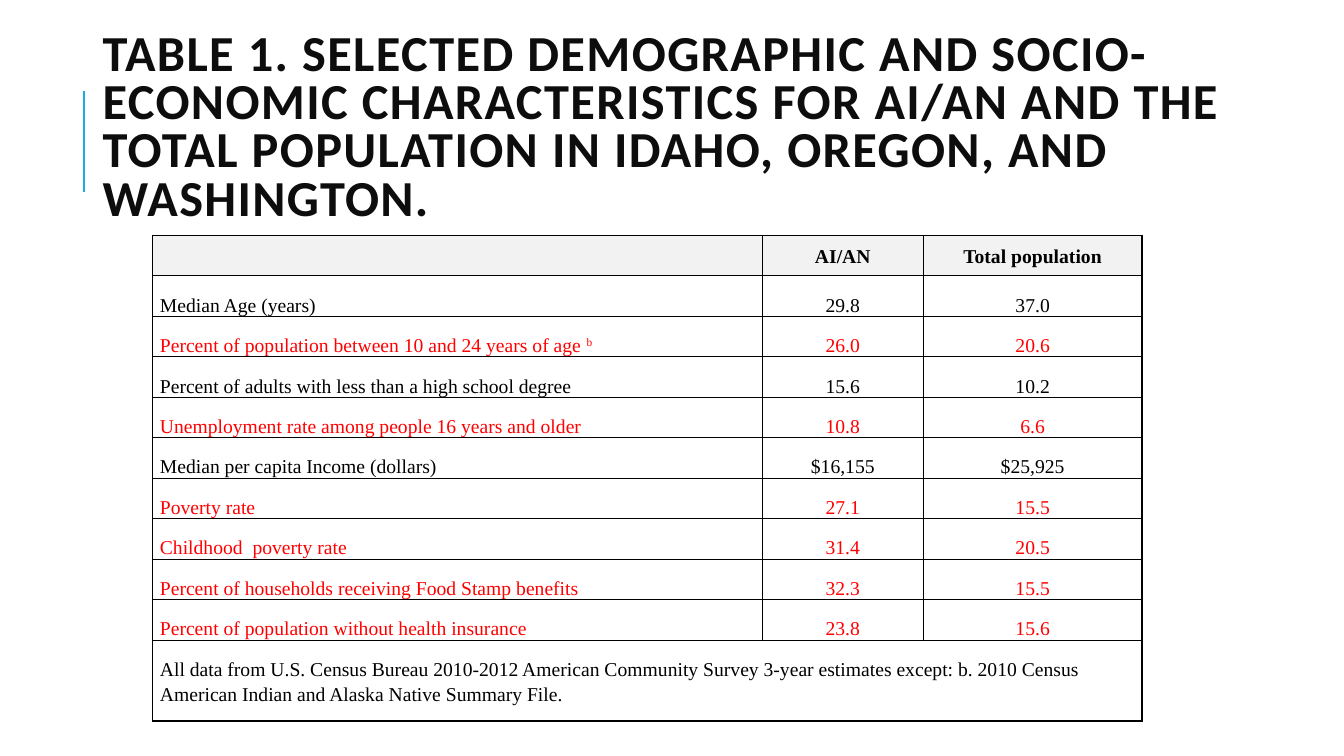
from pptx import Presentation
from pptx.dml.color import RGBColor
from pptx.enum.shapes import MSO_CONNECTOR
from pptx.enum.text import MSO_ANCHOR as ANCHOR, PP_ALIGN as ALIGN
from pptx.oxml.ns import qn
from pptx.util import Cm, Pt
from lxml.etree import SubElement

# Content
TITLE = ("TABLE 1. SELECTED DEMOGRAPHIC AND SOCIO-ECONOMIC CHARACTERISTICS "
         "FOR AI/AN AND THE TOTAL POPULATION IN IDAHO, OREGON, AND WASHINGTON.")
HEADER = ("", "AI/AN", "Total population")
BLACK, RED = "000000", "FF0000"
INDICATORS = [  # label, AI/AN, total population, colour
    ("Median Age (years)", "29.8", "37.0", BLACK),
    ("Percent of population between 10 and 24 years of age ", "26.0", "20.6", RED),
    ("Percent of adults with less than a high school degree", "15.6", "10.2", BLACK),
    ("Unemployment rate among people 16 years and older", "10.8", "6.6", RED),
    ("Median per capita Income (dollars)", "$16,155", "$25,925", BLACK),
    ("Poverty rate", "27.1", "15.5", RED),
    ("Childhood  poverty rate", "31.4", "20.5", RED),
    ("Percent of households receiving Food Stamp benefits", "32.3", "15.5", RED),
    ("Percent of population without health insurance", "23.8", "15.6", RED),
]
FOOTNOTE_ROW, FOOTNOTE_MARK = 2, "b"
SOURCE = ("All data from U.S. Census Bureau 2010-2012 American Community Survey "
          "3-year estimates except: b. 2010 Census American Indian and Alaska "
          "Native Summary File.")

# Layout in cm
COLUMNS = (15.36, 4.06, 5.51)
ROW = 1.02
TABLE_LEFT, TABLE_TOP = 3.85, 5.93


def rgb(value):
    return RGBColor.from_string(value)


def style_run(r, font, size, color, bold):
    r.font.name, r.font.size, r.font.bold = font, Pt(size), bold
    r.font.color.rgb = rgb(color)


def add_borders(cell):
    tc_pr = cell._tc.get_or_add_tcPr()
    for side in ("a:lnL", "a:lnR", "a:lnT", "a:lnB"):
        ln = SubElement(tc_pr, qn(side), w=str(Pt(1)))
        fill = SubElement(ln, qn("a:solidFill"))
        SubElement(fill, qn("a:srgbClr"), val=BLACK)


def write_cell(cell, text, color=BLACK, bold=False, align=ALIGN.LEFT,
               anchor=ANCHOR.BOTTOM):
    cell.margin_left = cell.margin_right = Cm(0.18)
    cell.margin_top = cell.margin_bottom = 0
    cell.vertical_anchor = anchor
    p = cell.text_frame.paragraphs[0]
    p.text = text
    p.alignment, p.line_spacing = align, 1.15
    for r in p.runs:
        style_run(r, "Times New Roman", 14, color, bold)


prs = Presentation()
prs.slide_width, prs.slide_height = Cm(33.87), Cm(19.05)
s = prs.slides.add_slide(prs.slide_layouts[6])

# Accent line beside the title
accent = s.shapes.add_connector(MSO_CONNECTOR.STRAIGHT, Cm(2.12), Cm(4.83), Cm(2.12), Cm(2.29))
accent.line.color.rgb = rgb("1CADE4")
accent.line.width = Pt(1.5)
SubElement(accent._element.spPr, qn("a:effectLst"))

# Table
row_count = len(INDICATORS) + 2
table = s.shapes.add_table(row_count, len(COLUMNS), Cm(TABLE_LEFT), Cm(TABLE_TOP),
                           Cm(sum(COLUMNS)), Cm(ROW * (row_count + 1))).table
for column, width in zip(table.columns, COLUMNS):
    column.width = Cm(width)
for row in table.rows:
    row.height = Cm(ROW)
table.rows[row_count - 1].height = Cm(2 * ROW)

for i, row in enumerate(table.rows):
    for cell in row.cells:
        add_borders(cell)
        if i == 0:
            cell.fill.solid()
            cell.fill.fore_color.rgb = rgb("F2F2F2")
        else:
            cell.fill.background()

for j, text in enumerate(HEADER):
    write_cell(table.cell(0, j), text, bold=True, align=ALIGN.CENTER, anchor=ANCHOR.MIDDLE)
for i, (*texts, color) in enumerate(INDICATORS, 1):
    for j, text in enumerate(texts):
        write_cell(table.cell(i, j), text, color, align=ALIGN.CENTER if j else ALIGN.LEFT)

# Footnote mark and source row
mark = table.cell(FOOTNOTE_ROW, 0).text_frame.paragraphs[0].add_run()
mark.text = FOOTNOTE_MARK
style_run(mark, "Times New Roman", 14, RED, False)
mark._r.get_or_add_rPr().set("baseline", "30000")

source = table.cell(row_count - 1, 0)
source.merge(table.cell(row_count - 1, len(COLUMNS) - 1))
write_cell(source, SOURCE, anchor=ANCHOR.MIDDLE)

# Title
tf = s.shapes.add_textbox(Cm(2.34), Cm(1.02), Cm(29.21), Cm(4.47)).text_frame
tf.word_wrap = True
tf.vertical_anchor = ANCHOR.MIDDLE
p = tf.paragraphs[0]
p.text = TITLE
p.line_spacing = 0.8
style_run(p.runs[0], "Calibri", 36, "0D0D0D", True)
p.runs[0]._r.get_or_add_rPr().set("spc", "100")

prs.save("out.pptx")
